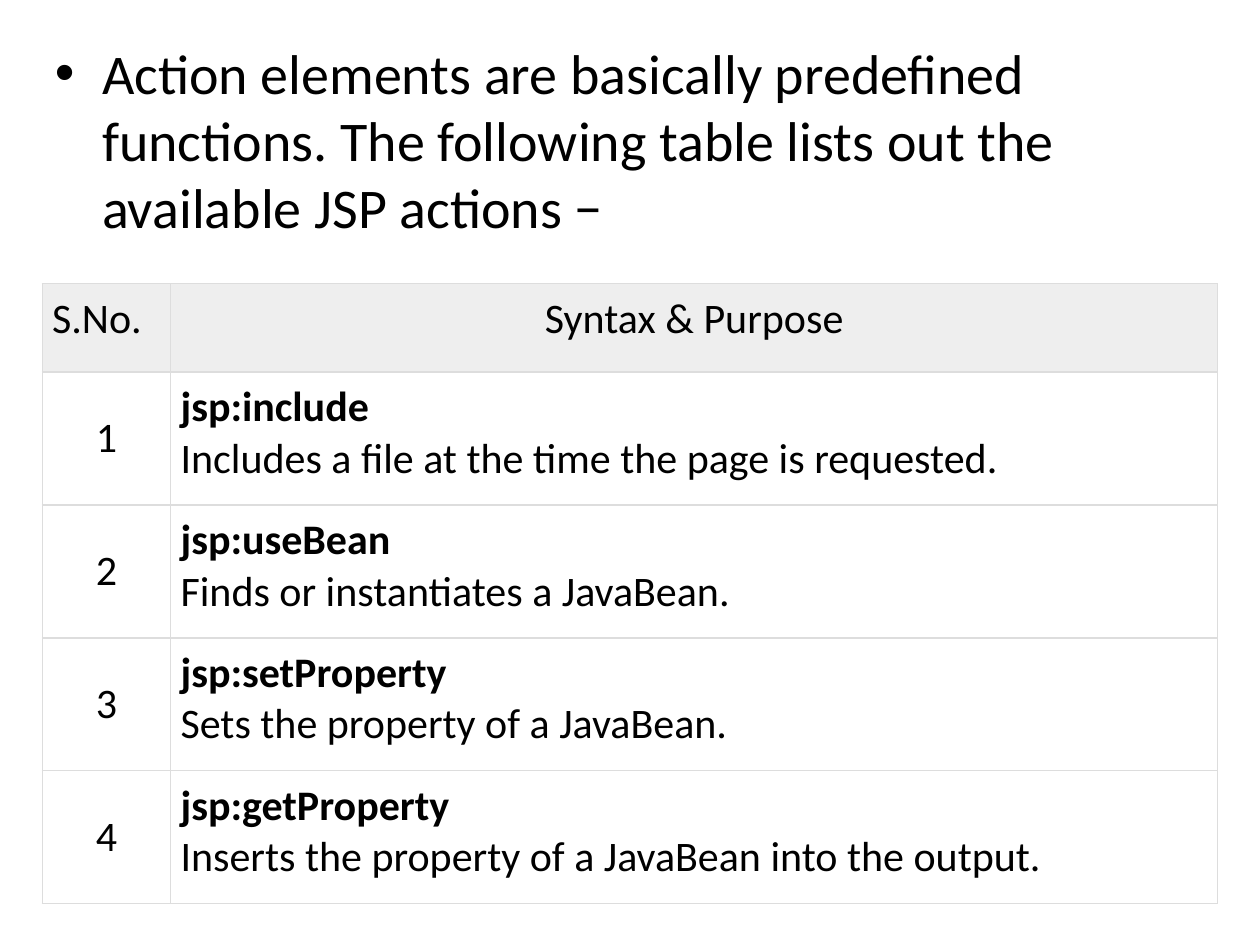
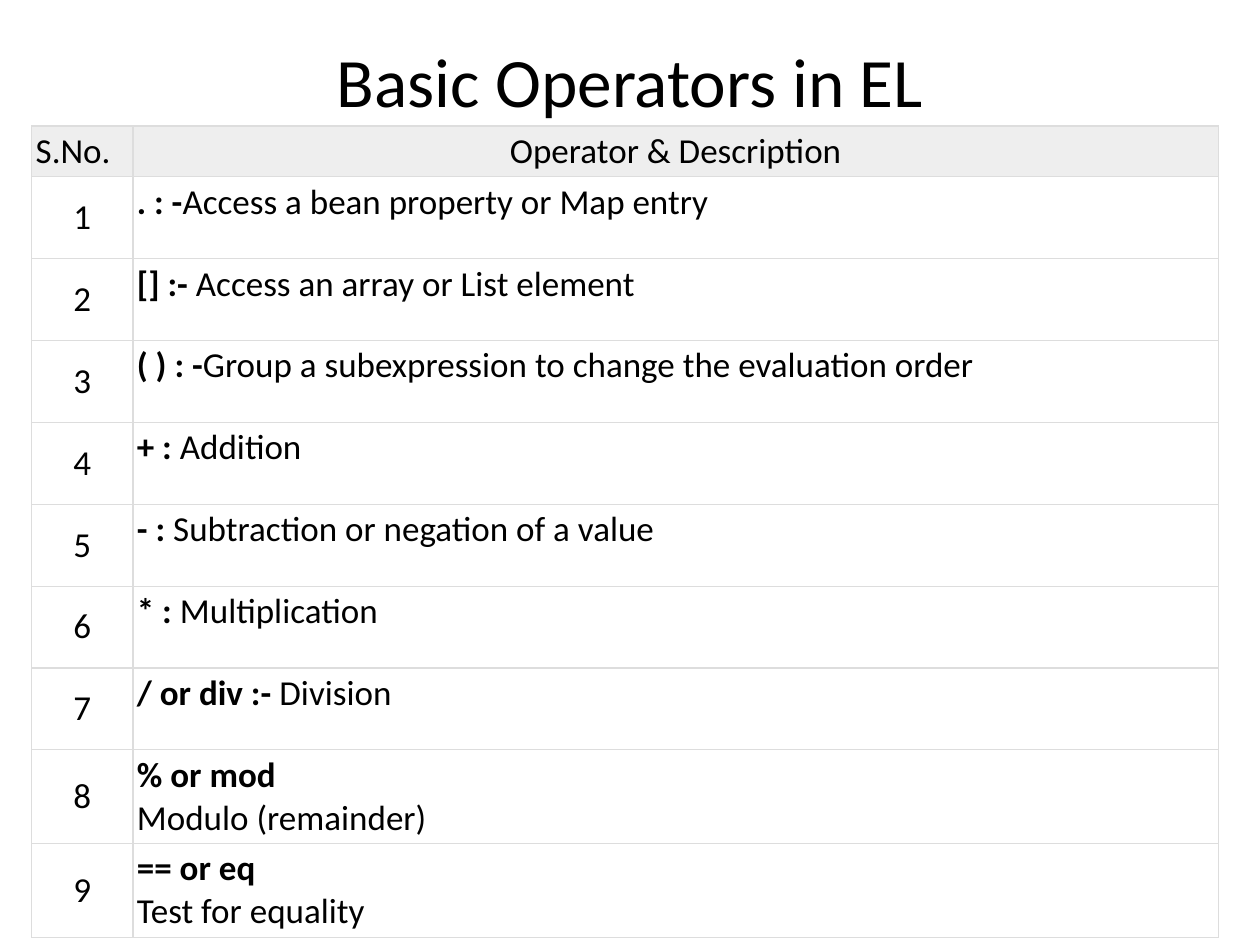
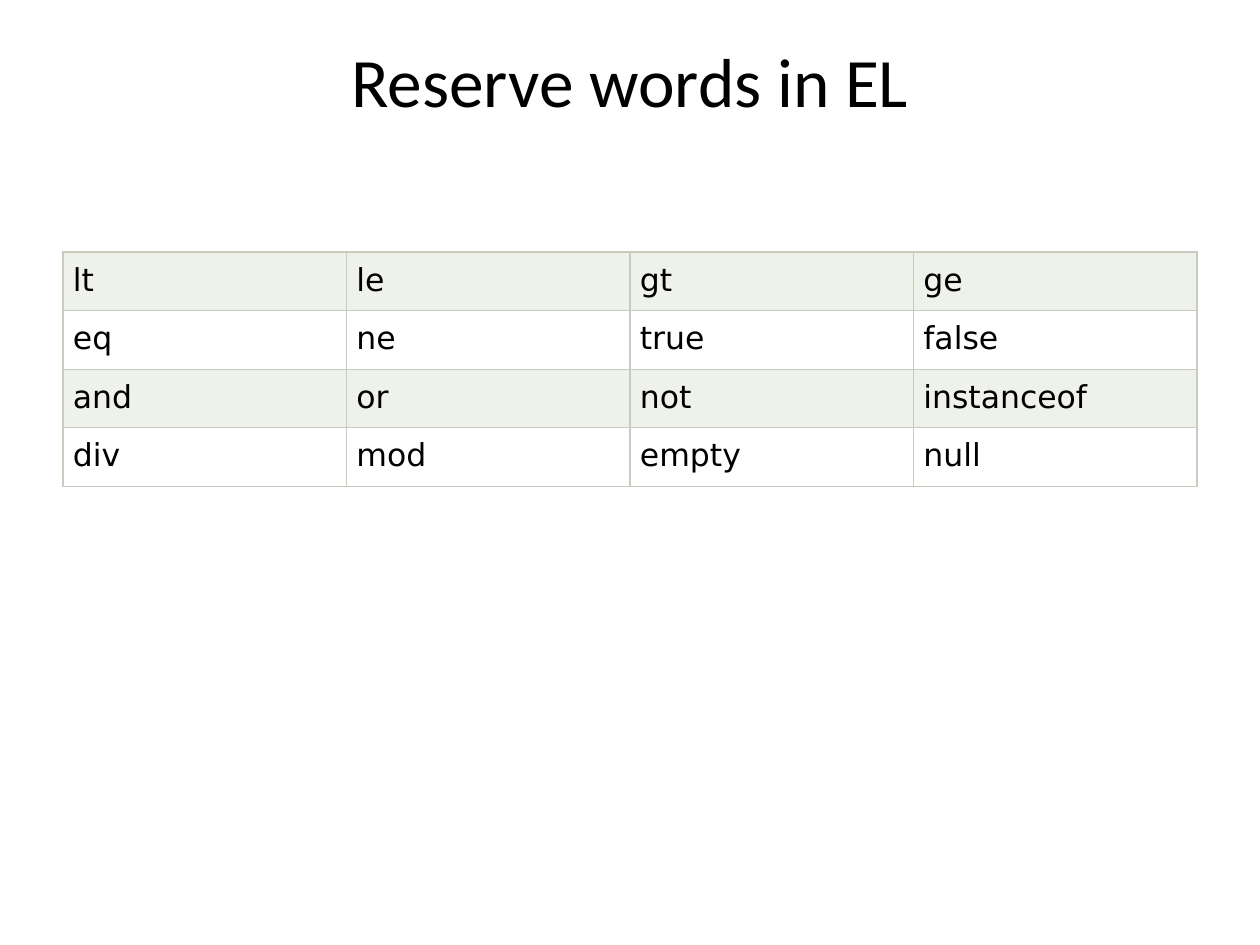
from pptx import Presentation
from pptx.dml.color import RGBColor
from pptx.enum.text import MSO_ANCHOR, PP_ALIGN
from pptx.oxml import parse_xml
from pptx.oxml.ns import nsdecls
from pptx.util import Cm, Pt

LEFT, MID, JUST = PP_ALIGN.LEFT, PP_ALIGN.CENTER, PP_ALIGN.JUSTIFY
TOP, CENTRE = MSO_ANCHOR.TOP, MSO_ANCHOR.MIDDLE

HUES = {
    "text": "000000",
    "page": "FFFFFF",
    "head": "EEEEEE",
    "rule": "DDDDDD",
    "band": "EFF1EB",
    "grid": "C7CCBE",
}
FONT, CODE = "Calibri", "DejaVu Sans"

INTRO = ("Action elements are basically predefined functions. "
         "The following table lists out the available JSP actions −")
ACTIONS = [
    ("jsp:include", "Includes a file at the time the page is requested."),
    ("jsp:useBean", "Finds or instantiates a JavaBean."),
    ("jsp:setProperty", "Sets the property of a JavaBean."),
    ("jsp:getProperty", "Inserts the property of a JavaBean into the output."),
]
INLINE = [
    (". : -", "Access a bean property or Map entry"),
    ("[] :- ", "Access an array or List element"),
    ("( ) : -", "Group a subexpression to change the evaluation order"),
    ("+ : ", "Addition"),
    ("- : ", "Subtraction or negation of a value"),
    ("* : ", "Multiplication"),
    ("/ or div :- ", "Division"),
]
STACKED = [
    ("% or mod", "Modulo (remainder)"),
    ("== or eq", "Test for equality"),
]
WORDS = [
    ["lt", "le", "gt", "ge"],
    ["eq", "ne", "true", "false"],
    ["and", "or", "not", "instanceof"],
    ["div", "mod", "empty", "null"],
]


def add_run(para, text, size, font=FONT, bold=False):
    run = para.add_run()
    run.text = text
    run.font.size, run.font.name, run.font.bold = Pt(size), font, bold
    run.font.color.rgb = RGBColor.from_string(HUES["text"])


def place(shape, left, top, width, height):
    shape.left, shape.top = Cm(left), Cm(top)
    shape.width, shape.height = Cm(width), Cm(height)


def add_title(slide, text):
    title = slide.shapes.title
    place(title, 1.27, 0.76, 22.86, 3.18)
    frame = title.text_frame
    frame.vertical_anchor, frame.margin_top = TOP, 0
    para = frame.paragraphs[0]
    para.alignment = MID
    add_run(para, text, 39.6)


def add_grid(slide, left, top, cols, rows):
    """Add an unstyled table with the given column widths and row heights."""
    grid = slide.shapes.add_table(len(rows), len(cols), Cm(left), Cm(top),
                                  Cm(sum(cols)), Cm(sum(rows))).table
    grid.first_row = grid.horz_banding = False
    for col, width in zip(grid.columns, cols):
        col.width = Cm(width)
    for row, height in zip(grid.rows, rows):
        row.height = Cm(height)
    return grid


def fill_cell(cell, paras, size, align, hue, rule, inset, font=FONT, anchor=TOP):
    """Fill a cell with paragraphs, each a list of (text, bold) runs."""
    cell.margin_left = cell.margin_right = Cm(inset)
    cell.margin_top = cell.margin_bottom = Cm(inset)
    cell.vertical_anchor = anchor
    frame = cell.text_frame
    for i, runs in enumerate(paras):
        para = frame.add_paragraph() if i else frame.paragraphs[0]
        para.alignment = align
        for text, bold in runs:
            add_run(para, text, size, font, bold)
    props = cell._tc.get_or_add_tcPr()
    for side in ("lnL", "lnR", "lnT", "lnB"):
        props.append(parse_xml(
            f'<a:{side} {nsdecls("a")} w="{Pt(0.75)}"><a:solidFill>'
            f'<a:srgbClr val="{HUES[rule]}"/></a:solidFill></a:{side}>'))
    cell.fill.solid()
    cell.fill.fore_color.rgb = RGBColor.from_string(HUES[hue])


def plain(text):
    return [[(text, False)]]


def stack(term, note):
    return [[(term, True)], [(note, False)]]


def join(term, note):
    return [[(term, True), (note, False)]]


def add_list(slide, left, top, cols, head, step, label, items, size, inset):
    """Add a numbered two-column table under a grey header row."""
    grid = add_grid(slide, left, top, cols, [head] + [step] * len(items))
    for col, (text, align) in enumerate([("S.No.", LEFT), (label, MID)]):
        fill_cell(grid.cell(0, col), plain(text), size, align, "head", "rule", inset)
    for row, paras in enumerate(items, 1):
        fill_cell(grid.cell(row, 0), plain(str(row)), size, MID, "page", "rule",
                  inset, anchor=CENTRE)
        fill_cell(grid.cell(row, 1), paras, size, JUST, "page", "rule", inset)


def add_actions(deck):
    slide = deck.slides.add_slide(deck.slide_layouts[1])
    title, body = slide.placeholders
    title.element.getparent().remove(title.element)
    place(body, 0.85, 0.64, 24.13, 12.57)
    add_run(body.text_frame.paragraphs[0], INTRO, 32)
    add_list(slide, 0.85, 5.72, [2.59, 21.11], 1.78, 2.68, "Syntax & Purpose",
             [stack(*item) for item in ACTIONS], 24, 0.2)


def add_operators(deck):
    slide = deck.slides.add_slide(deck.slide_layouts[5])
    add_title(slide, "Basic Operators in EL")
    items = [join(*item) for item in INLINE] + [stack(*item) for item in STACKED]
    add_list(slide, 0.64, 2.54, [2.04, 21.88], 1.02, 1.65,
             "Operator & Description", items, 20, 0.08)


def add_words(deck):
    slide = deck.slides.add_slide(deck.slide_layouts[5])
    add_title(slide, "Reserve words in EL")
    grid = add_grid(slide, 1.27, 5.08, [22.86 / 4] * 4, [1.18] * len(WORDS))
    for row, words in enumerate(WORDS):
        hue = "page" if row % 2 else "band"
        for col, word in enumerate(words):
            fill_cell(grid.cell(row, col), plain(word), 18, JUST, hue, "grid",
                      0.2, CODE)


def main():
    deck = Presentation()
    deck.slide_width, deck.slide_height = Cm(25.4), Cm(19.05)
    add_actions(deck)
    add_operators(deck)
    add_words(deck)
    deck.save("out.pptx")


if __name__ == "__main__":
    main()
